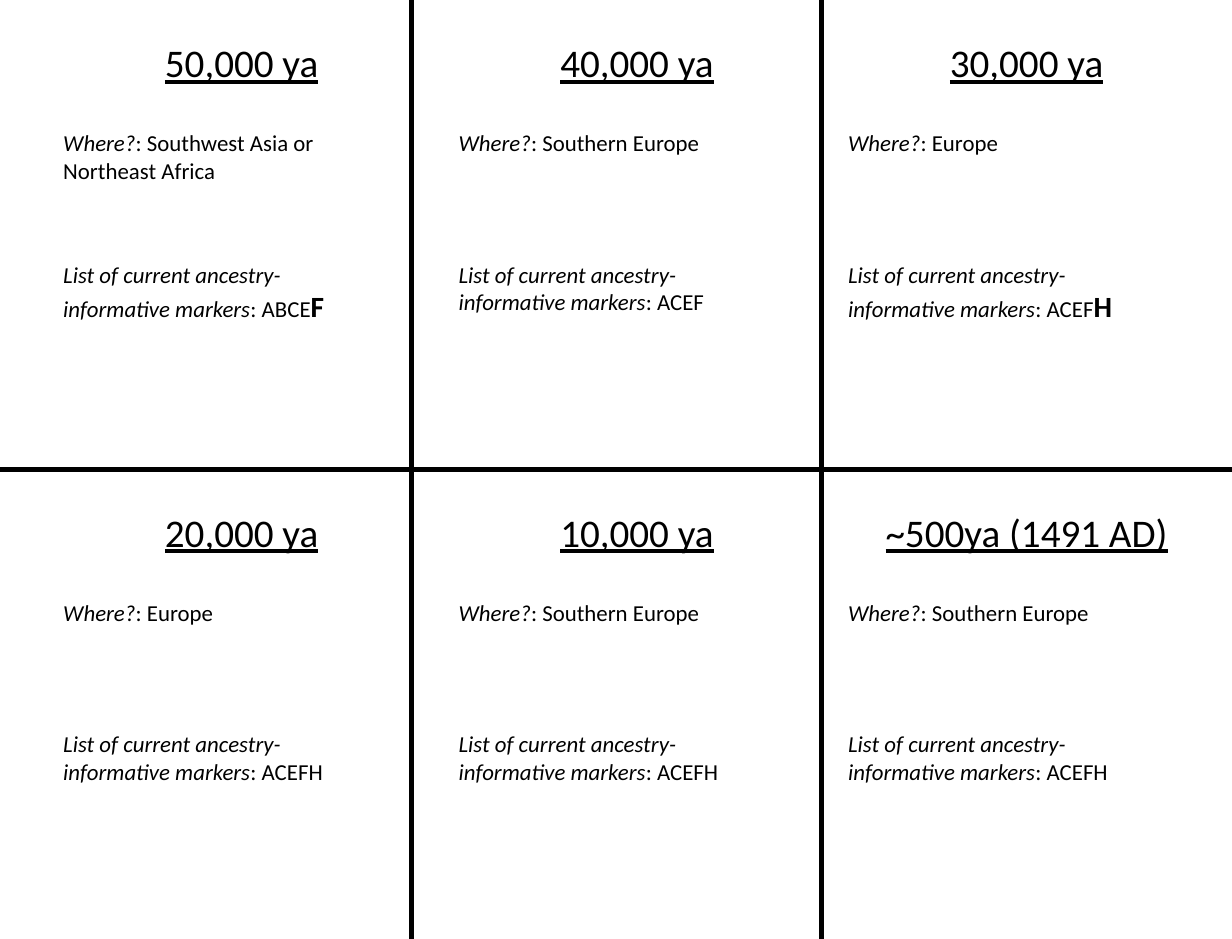
from collections import namedtuple

from lxml import etree
from pptx import Presentation
from pptx.dml.color import RGBColor
from pptx.enum.shapes import MSO_CONNECTOR as Connector
from pptx.enum.text import MSO_AUTO_SIZE as AutoSize, PP_ALIGN as Align
from pptx.oxml.ns import qn
from pptx.util import Emu, Pt

PX = 9144
WIDTH, HEIGHT = 1050, 800
ROW_HEIGHT = HEIGHT // 2
COLUMN_LEFTS = (44, 381, 713)
DIVIDERS = (
    (0, ROW_HEIGHT, WIDTH, ROW_HEIGHT),
    (351, 0, 351, HEIGHT),
    (700, 0, 700, HEIGHT),
)
BLACK = RGBColor(0, 0, 0)
WHITE = RGBColor(255, 255, 255)
FONT = "Calibri"

Period = namedtuple("Period", "date place markers new_marker place_lines")
PERIODS = (
    Period("50,000 ya", "Southwest Asia or Northeast Africa", "ABCE", "F", 2),
    Period("40,000 ya", "Southern Europe", "ACEF", "", 1),
    Period("30,000 ya", "Europe", "ACEF", "H", 1),
    Period("20,000 ya", "Europe", "ACEFH", "", 1),
    Period("10,000 ya", "Southern Europe", "ACEFH", "", 1),
    Period("~500ya (1491 AD)", "Southern Europe", "ACEFH", "", 1),
)


def px(*lengths):
    return [Emu(length * PX) for length in lengths]


def add_divider(slide, ends):
    line = slide.shapes.add_connector(Connector.STRAIGHT, *px(*ends))
    line.line.color.rgb = BLACK
    line.line.width = Pt(3)
    etree.SubElement(line._element.spPr, qn("a:effectLst"))


def add_paragraph_box(slide, left, top, width, height):
    shape = slide.shapes.add_textbox(*px(left, top, width, height))
    shape.text_frame.word_wrap = True
    shape.text_frame.auto_size = AutoSize.SHAPE_TO_FIT_TEXT
    return shape.text_frame.paragraphs[0]


def add_run(paragraph, text, size=14, bold=None, italic=None, underline=None):
    run = paragraph.add_run()
    run.text = text
    font = run.font
    font.name, font.size = FONT, Pt(size)
    font.bold, font.italic, font.underline = bold, italic, underline
    font.color.rgb = BLACK


def add_heading(slide, left, top, text):
    paragraph = add_paragraph_box(slide, left, top, 324, 50)
    paragraph.alignment = Align.CENTER
    add_run(paragraph, text, size=24, underline=True)


def add_entry(slide, left, top, height, label, value, highlight=""):
    paragraph = add_paragraph_box(slide, left, top, 285, height)
    add_run(paragraph, label, italic=True)
    add_run(paragraph, f": {value}")
    if highlight:
        add_run(paragraph, highlight, size=18, bold=True)


def add_period(slide, left, top, period):
    add_heading(slide, left, top + 28, period.date)
    place_height = 57 if period.place_lines == 2 else 34
    add_entry(slide, left, top + 105, place_height, "Where?", period.place)
    add_entry(slide, left, top + 217, 64 if period.new_marker else 57,
              "List of current ancestry-informative markers",
              period.markers, period.new_marker)


def main():
    presentation = Presentation()
    presentation.slide_width, presentation.slide_height = px(WIDTH, HEIGHT)
    slide = presentation.slides.add_slide(presentation.slide_layouts[6])
    slide.background.fill.solid()
    slide.background.fill.fore_color.rgb = WHITE
    for ends in DIVIDERS:
        add_divider(slide, ends)
    for index, period in enumerate(PERIODS):
        row, column = divmod(index, len(COLUMN_LEFTS))
        add_period(slide, COLUMN_LEFTS[column], row * ROW_HEIGHT, period)
    presentation.save("out.pptx")


if __name__ == "__main__":
    main()
